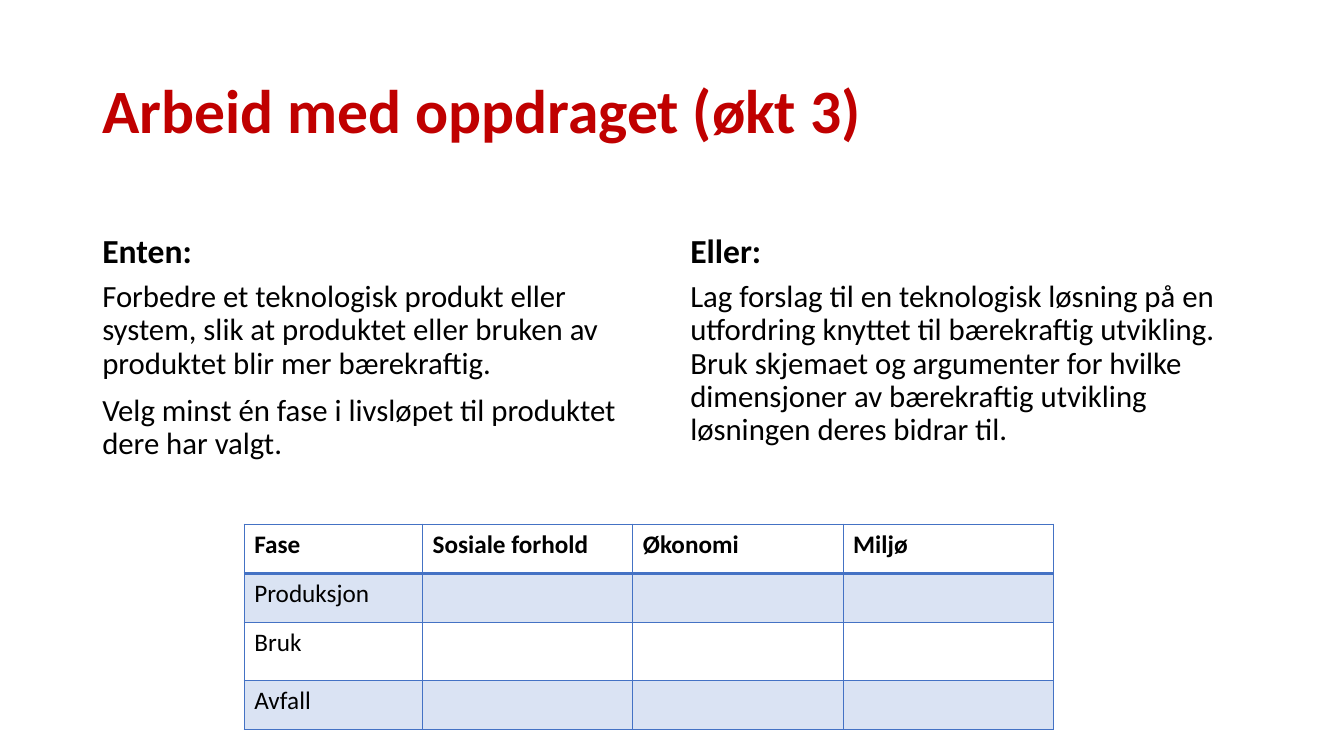
import dataclasses

import lxml.etree
import pptx
import pptx.dml.color
import pptx.enum.text
import pptx.oxml.ns
import pptx.util

Pt = pptx.util.Pt
Anchor = pptx.enum.text.MSO_ANCHOR


@dataclasses.dataclass(frozen=True)
class Theme:
    font: str = "Calibri"
    red: str = "C00000"
    ink: str = "000000"
    rule: str = "4472C4"
    band: str = "DAE3F3"
    title: int = 44
    head: int = 24
    body: int = 22
    cell: int = 18


THEME = Theme()


def add_run(para, text, size, color=THEME.ink, bold=False):
    run = para.add_run()
    run.text = text
    run.font.name = THEME.font
    run.font.size = Pt(size)
    run.font.bold = bold
    run.font.color.rgb = pptx.dml.color.RGBColor.from_string(color)


def add_text(slide, box, paras, size, color=THEME.ink, bold=False,
             anchor=Anchor.TOP, before=10):
    frame = slide.shapes.add_textbox(*map(Pt, box)).text_frame
    frame.word_wrap = True
    frame.vertical_anchor = anchor
    for i, text in enumerate(paras):
        para = frame.add_paragraph() if i else frame.paragraphs[0]
        para.line_spacing = 0.9
        para.space_before = Pt(before)
        add_run(para, text, size, color, bold)


def add_title(slide, box, text):
    add_text(slide, box, [text], THEME.title, THEME.red, True,
             Anchor.MIDDLE, 0)


def add_option(slide, box, head, paras):
    """Place a bold heading above its paragraphs."""
    left, top, width, height = box
    split = 64.8
    add_text(slide, (left, top, width, split), [head], THEME.head,
             bold=True, anchor=Anchor.BOTTOM)
    add_text(slide, (left, top + split, width, height - split), paras,
             THEME.body)


def add_edges(cell, widths):
    """Draw the cell's edges; widths maps L, R, T, B to points."""
    props = cell._tc.get_or_add_tcPr()
    qn = pptx.oxml.ns.qn
    for side, width in widths.items():
        line = lxml.etree.SubElement(props, qn("a:ln" + side),
                                     w=str(Pt(width)))
        fill = lxml.etree.SubElement(line, qn("a:solidFill"))
        lxml.etree.SubElement(fill, qn("a:srgbClr"), val=THEME.rule)


def add_grid(slide, box, cols, rows, heads, phases):
    table = slide.shapes.add_table(len(rows), len(cols),
                                   *map(Pt, box)).table
    for col, width in zip(table.columns, cols):
        col.width = Pt(width)
    for row, height in zip(table.rows, rows):
        row.height = Pt(height)
    for r in range(len(rows)):
        for c in range(len(cols)):
            cell = table.cell(r, c)
            add_edges(cell, {"L": 1, "R": 1, "T": 2 if r == 1 else 1,
                             "B": 2 if r == 0 else 1})
            if r % 2:
                cell.fill.solid()
                cell.fill.fore_color.rgb = (
                    pptx.dml.color.RGBColor.from_string(THEME.band))
            else:
                cell.fill.background()
            text = heads[c] if r == 0 else phases[r - 1] if c == 0 else ""
            if text:
                add_run(cell.text_frame.paragraphs[0], text, THEME.cell,
                        bold=r == 0)


def main():
    deck = pptx.Presentation()
    deck.slide_width, deck.slide_height = Pt(960), Pt(540)
    slide = deck.slides.add_slide(deck.slide_layouts[6])
    add_title(slide, (66, 28.8, 828, 104.4), "Arbeid med oppdraget (økt 3)")
    add_option(slide, (66, 132.5, 406, 355), "Enten:", [
        "Forbedre et teknologisk produkt eller system, slik at produktet "
        "eller bruken av produktet blir mer bærekraftig.",
        "Velg minst én fase i livsløpet til produktet dere har valgt."])
    add_option(slide, (486, 132.5, 408, 355), "Eller:", [
        "Lag forslag til en teknologisk løsning på en utfordring knyttet "
        "til bærekraftig utvikling. Bruk skjemaet og argumenter for hvilke "
        "dimensjoner av bærekraftig utvikling løsningen deres bidrar til."])
    add_grid(slide, (174.5, 374.5, 578, 146.5),
             [127.4] + [150.2] * 3, [35, 35, 41.5, 35],
             ["Fase", "Sosiale forhold", "Økonomi", "Miljø"],
             ["Produksjon", "Bruk", "Avfall"])
    deck.save("out.pptx")


if __name__ == "__main__":
    main()
